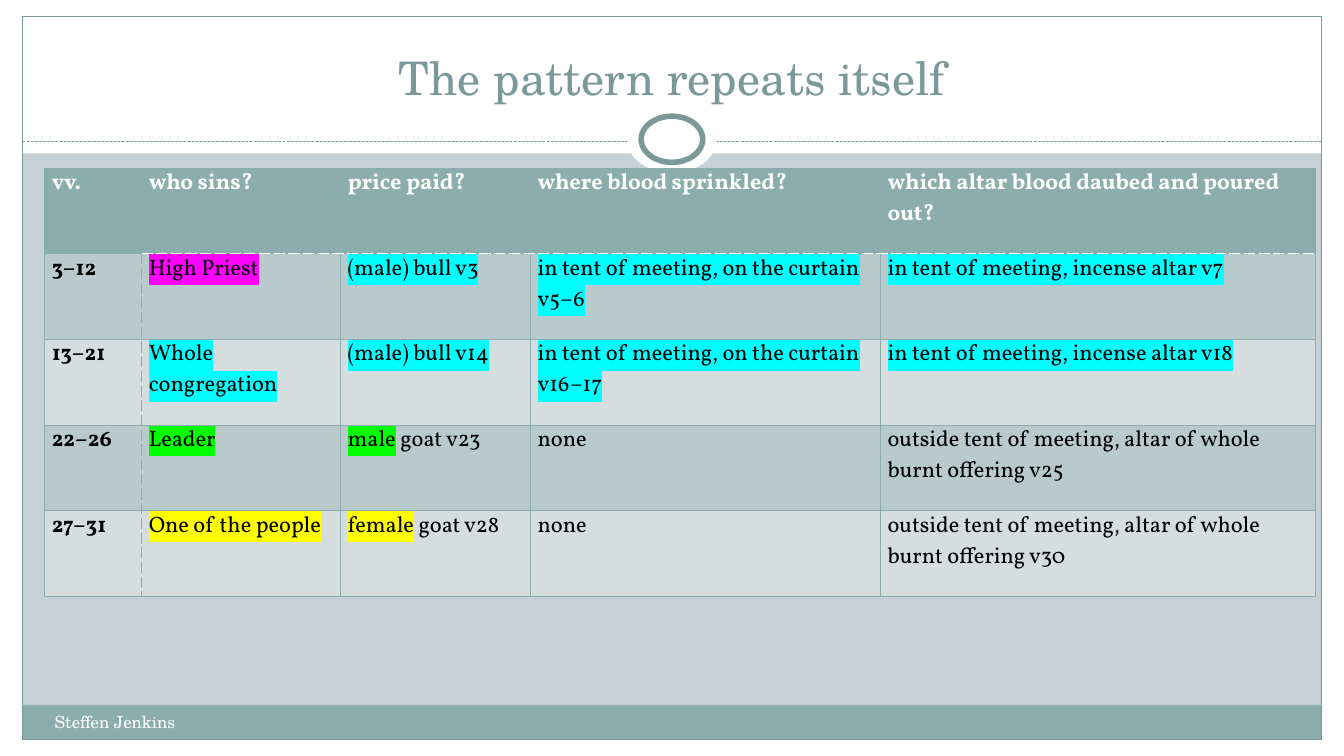
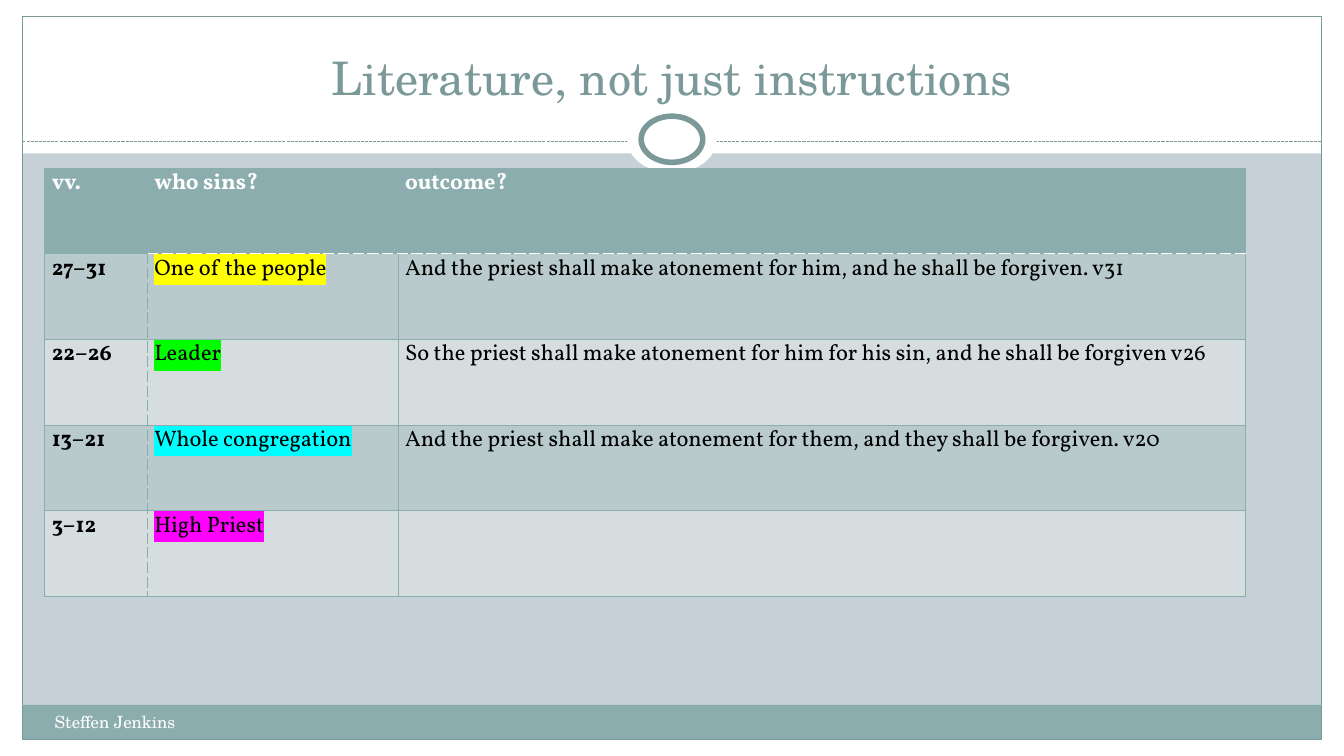
"""Build two slides that tabulate who sins and what follows."""
from lxml.etree import SubElement
from pptx import Presentation
from pptx.dml.color import RGBColor
from pptx.enum.dml import MSO_LINE
from pptx.enum.shapes import MSO_CONNECTOR, MSO_SHAPE
from pptx.enum.text import MSO_ANCHOR, PP_ALIGN
from pptx.oxml.ns import qn
from pptx.util import Pt

WHITE = RGBColor(0xFF, 0xFF, 0xFF)
BLACK = RGBColor(0x00, 0x00, 0x00)
BACKGROUND = RGBColor(0xC5, 0xD1, 0xD7)
TEAL = RGBColor(0x8C, 0xAD, 0xAE)
DARK_TEAL = RGBColor(0x7C, 0x99, 0x9A)
DARK_ROW = RGBColor(0xB8, 0xCA, 0xCB)
LIGHT_ROW = RGBColor(0xD5, 0xDD, 0xDE)
MAGENTA = RGBColor(0xFF, 0x00, 0xFF)
CYAN = RGBColor(0x00, 0xFF, 0xFF)
GREEN = RGBColor(0x00, 0xFF, 0x00)
YELLOW = RGBColor(0xFF, 0xFF, 0x00)

HEADING_FONT = "TeX Gyre Schola"
TABLE_FONT = "Vollkorn"
PAGE_WIDTH, PAGE_HEIGHT = 960, 540
SIDE, EDGE = 16, 12
INNER_WIDTH = PAGE_WIDTH - 2 * SIDE
CONTENT_LEFT = 2 * SIDE
TABLE_TOP, ROW_HEIGHT = 120, 61.2

HIGH_PRIEST = (MAGENTA, "High Priest", "")
CONGREGATION = (CYAN, "Whole congregation", "")
LEADER = (GREEN, "Leader", "")
COMMONER = (YELLOW, "One of the people", "")

PATTERN_WIDTHS = (69.3, 142.1, 135.7, 250, 310.8)
PATTERN_ROWS = (
    ("vv.", "who sins?", "price paid?", "where blood sprinkled?",
     "which altar blood daubed and poured out?"),
    ("3–12", HIGH_PRIEST, (CYAN, "(male) bull v3", ""),
     (CYAN, "in tent of meeting, on the curtain v5–6", ""),
     (CYAN, "in tent of meeting, incense altar v7", "")),
    ("13–21", CONGREGATION, (CYAN, "(male) bull v14", ""),
     (CYAN, "in tent of meeting, on the curtain v16–17", ""),
     (CYAN, "in tent of meeting, incense altar v18", "")),
    ("22–26", LEADER, (GREEN, "male", " goat v23"), "none",
     "outside tent of meeting, altar of whole burnt offering v25"),
    ("27–31", COMMONER, (YELLOW, "female", " goat v28"), "none",
     "outside tent of meeting, altar of whole burnt offering v30"),
)
OUTCOME_WIDTHS = (73.2, 179.2, 605)
OUTCOME_ROWS = (
    ("vv.", "who sins?", "outcome?"),
    ("27–31", COMMONER,
     "And the priest shall make atonement for him, and he shall be forgiven. v31"),
    ("22–26", LEADER,
     "So the priest shall make atonement for him for his sin, and he shall be forgiven v26"),
    ("13–21", CONGREGATION,
     "And the priest shall make atonement for them, and they shall be forgiven. v20"),
    ("3–12", HIGH_PRIEST, ""),
)


def add_panel(page, kind, bounds, fill=None, line=None, weight=0.75):
    """Add a preset shape with an optional fill and outline."""
    panel = page.shapes.add_shape(kind, *map(Pt, bounds))
    panel.shadow.inherit = False
    if fill is None:
        panel.fill.background()
    else:
        panel.fill.solid()
        panel.fill.fore_color.rgb = fill
    if line is None:
        panel.line.fill.background()
    else:
        panel.line.color.rgb = line
        panel.line.width = Pt(weight)


def add_dashed_rule(page, top):
    """Add the dashed line that closes the title area."""
    rule = page.shapes.add_connector(
        MSO_CONNECTOR.STRAIGHT, Pt(SIDE), Pt(top), Pt(PAGE_WIDTH - SIDE), Pt(top))
    rule.line.color.rgb = DARK_TEAL
    rule.line.width = Pt(0.75)
    rule.line.dash_style = MSO_LINE.SQUARE_DOT
    SubElement(rule.element.spPr, qn("a:effectLst"))


def style_font(font, name, size, color, bold=False):
    """Set the face, size, colour and weight of a font."""
    font.name, font.size, font.bold = name, Pt(size), bold
    font.color.rgb = color


def add_label(page, text, bounds, size, color, align=PP_ALIGN.LEFT, anchor=MSO_ANCHOR.TOP):
    """Add a one-paragraph text box in the heading font."""
    frame = page.shapes.add_textbox(*map(Pt, bounds)).text_frame
    frame.word_wrap = True
    frame.vertical_anchor = anchor
    para = frame.paragraphs[0]
    para.text = text
    para.alignment = align
    style_font(para.font, HEADING_FONT, size, color)


def add_page(deck, title):
    """Add a slide with the shared frame, title and footer."""
    page = deck.slides.add_slide(deck.slide_layouts[6])
    page.background.fill.solid()
    page.background.fill.fore_color.rgb = BACKGROUND
    margins = (
        (0, PAGE_HEIGHT - EDGE, PAGE_WIDTH, EDGE),
        (0, 0, PAGE_WIDTH, 109.5),
        (0, 0, SIDE, PAGE_HEIGHT),
        (PAGE_WIDTH - SIDE, 0, SIDE, PAGE_HEIGHT),
    )
    for bounds in margins:
        add_panel(page, MSO_SHAPE.RECTANGLE, bounds, WHITE)
    add_panel(page, MSO_SHAPE.RECTANGLE, (SIDE, 503.5, INNER_WIDTH, 24.5), TEAL)
    add_panel(page, MSO_SHAPE.RECTANGLE,
              (SIDE, EDGE, INNER_WIDTH, PAGE_HEIGHT - 2 * EDGE), line=DARK_TEAL)
    add_dashed_rule(page, 100.8)
    add_panel(page, MSO_SHAPE.OVAL, (448, 75.6, 64, 48), WHITE)
    add_panel(page, MSO_SHAPE.OVAL, (458, 83, 44, 33), WHITE, DARK_TEAL, 4)
    add_label(page, title, (CONTENT_LEFT, 18, PAGE_WIDTH - 2 * CONTENT_LEFT, 60),
              33, DARK_TEAL, PP_ALIGN.CENTER, MSO_ANCHOR.BOTTOM)
    add_label(page, "Steffen Jenkins", (CONTENT_LEFT, 505, 376, 29), 12, WHITE)
    return page


def add_border(cell, side, color, dashed):
    """Draw one side of a table cell."""
    weight = Pt(0.9 if dashed else 0.75)
    border = SubElement(cell._tc.get_or_add_tcPr(), qn(f"a:ln{side}"), w=str(weight))
    SubElement(SubElement(border, qn("a:solidFill")), qn("a:srgbClr"), val=str(color))
    SubElement(border, qn("a:prstDash"), val="sysDash" if dashed else "solid")


def add_borders(cell, row, column):
    """Draw solid borders, dashed below the header and beside the first column."""
    body = row > 0
    add_border(cell, "L", TEAL, body and column == 1)
    add_border(cell, "R", TEAL, body and column == 0)
    for side, header_row in (("T", 1), ("B", 0)):
        under_header = row == header_row and column > 0
        add_border(cell, side, WHITE if under_header else TEAL, under_header)


def add_span(para, text, highlight=None):
    """Add a run, marked with a highlight colour if one is given."""
    span = para.add_run()
    span.text = text
    if highlight is not None:
        mark = SubElement(span.font._element, qn("a:highlight"))
        SubElement(mark, qn("a:srgbClr"), val=str(highlight))


def fill_cell(cell, content, row, column):
    """Write and style one table cell."""
    add_borders(cell, row, column)
    cell.fill.solid()
    cell.fill.fore_color.rgb = TEAL if row == 0 else DARK_ROW if row % 2 else LIGHT_ROW
    cell.margin_left = cell.margin_right = Pt(5)
    cell.margin_top = cell.margin_bottom = Pt(0)
    para = cell.text_frame.paragraphs[0]
    para.space_after = Pt(6)
    style_font(para.font, TABLE_FONT, 16, BLACK if row else WHITE, row == 0 or column == 0)
    highlight, marked, plain = (None, "", content) if isinstance(content, str) else content
    if marked:
        add_span(para, marked, highlight)
    if plain:
        add_span(para, plain)


def add_verse_table(page, widths, rows):
    """Add a table with a header row and alternating body rows."""
    table = page.shapes.add_table(
        len(rows), len(widths), Pt(CONTENT_LEFT), Pt(TABLE_TOP),
        Pt(sum(widths)), Pt(ROW_HEIGHT * len(rows))).table
    table.first_row = table.horz_banding = False
    for column, width in zip(table.columns, widths):
        column.width = Pt(width)
    for row, contents in enumerate(rows):
        table.rows[row].height = Pt(ROW_HEIGHT)
        for column, content in enumerate(contents):
            fill_cell(table.cell(row, column), content, row, column)


def main():
    """Build and save the deck."""
    deck = Presentation()
    deck.slide_width, deck.slide_height = Pt(PAGE_WIDTH), Pt(PAGE_HEIGHT)
    pages = (
        ("The pattern repeats itself", PATTERN_WIDTHS, PATTERN_ROWS),
        ("Literature, not just instructions", OUTCOME_WIDTHS, OUTCOME_ROWS),
    )
    for title, widths, rows in pages:
        add_verse_table(add_page(deck, title), widths, rows)
    deck.save("out.pptx")


if __name__ == "__main__":
    main()
